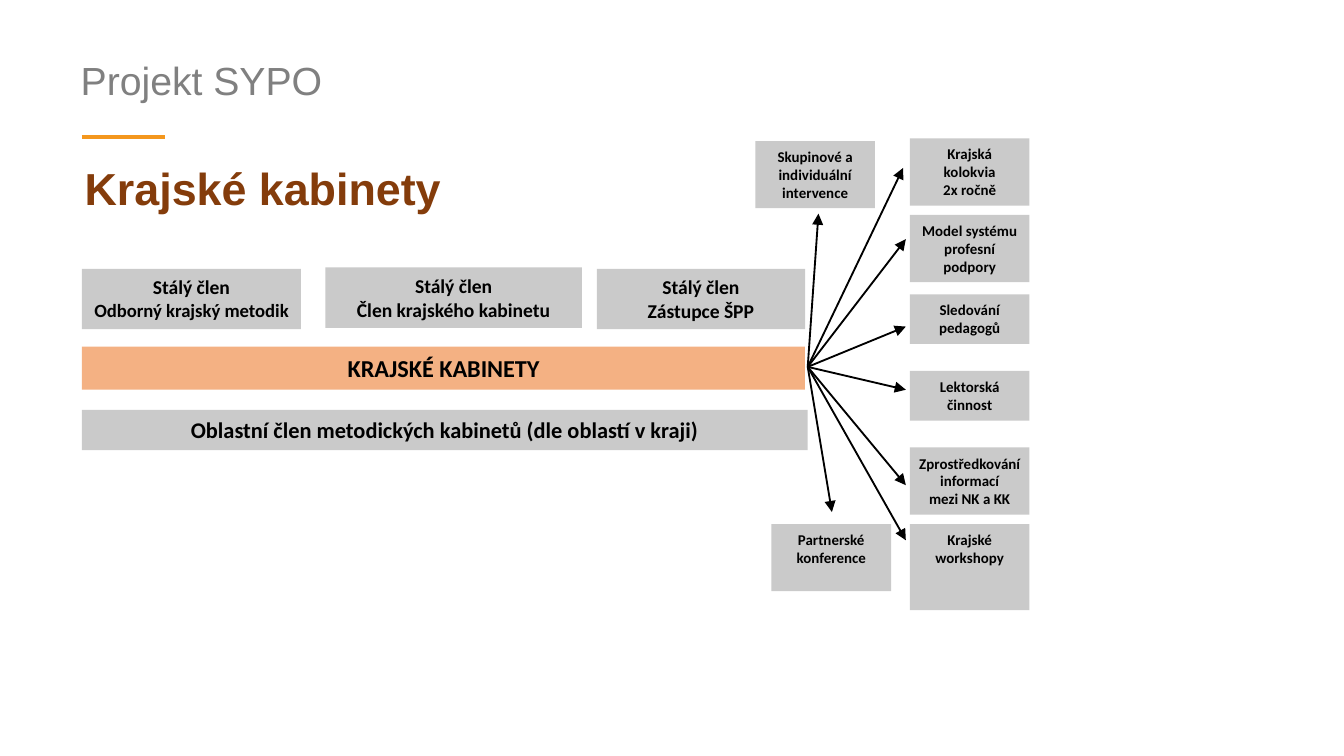
from lxml.etree import SubElement
from pptx import Presentation
from pptx.dml.color import RGBColor
from pptx.enum.shapes import MSO_CONNECTOR, MSO_SHAPE
from pptx.enum.text import MSO_ANCHOR, PP_ALIGN
from pptx.oxml.ns import qn
from pptx.util import Inches, Pt

COLORS = {
    "accent": "F4971D",
    "title": "808080",
    "heading": "843C0B",
    "band": "F4B183",
    "box": "CACACA",
    "ink": "000000",
}
HUB = (6.01, 2.73)
ACTIVITY_LEFT, ACTIVITY_WIDTH = 6.77, 0.89

MEMBERS = [
    (0.61, 2, 1.63, ["Stálý člen", "Odborný krajský metodik"], [10.5, 10]),
    (2.42, 1.99, 1.91, ["Stálý člen", "Člen krajského kabinetu"], [10.5, 10.5]),
    (4.44, 2, 1.55, ["Stálý člen", "Zástupce ŠPP"], [10.5, 10.5]),
]
ACTIVITIES = [
    (ACTIVITY_LEFT, 1.03, 0.5, ["Krajská", "kolokvia", "2x ročně"], (6.72, 1.25)),
    (ACTIVITY_LEFT, 1.6, 0.5, ["Model systému profesní podpory"], (6.74, 1.78)),
    (ACTIVITY_LEFT, 2.19, 0.37, ["Sledování pedagogů"], (6.74, 2.43)),
    (ACTIVITY_LEFT, 2.76, 0.37, ["Lektorská činnost"], (6.74, 2.9)),
    (ACTIVITY_LEFT, 3.33, 0.5, ["Zprostředkování", "informací", "mezi NK a KK"], (6.74, 3.61)),
    (ACTIVITY_LEFT, 3.9, 0.64, ["Krajské", "workshopy"], (6.74, 4.02)),
    (5.74, 3.9, 0.5, ["Partnerské", "konference"], (6.19, 3.81)),
    (5.62, 1.05, 0.5, ["Skupinové a individuální intervence"], (6.09, 1.59)),
]


def color(name):
    """Return the named colour."""
    return RGBColor.from_string(COLORS[name])


def prepare_frame(frame, anchor):
    """Set wrapping, even margins and the vertical anchor."""
    frame.word_wrap = True
    frame.vertical_anchor = anchor
    frame.margin_left = frame.margin_right = Inches(0.05)
    frame.margin_top = frame.margin_bottom = Inches(0.05)


def style_font(font, name, size, color_name, bold):
    """Set the face, size, colour and weight of a font."""
    font.name = name
    font.size = Pt(size)
    font.bold = bold
    font.color.rgb = color(color_name)


def add_heading(page, bounds, text, size, color_name, bold, spacing, anchor):
    """Add a one-line heading."""
    box = page.shapes.add_textbox(*map(Inches, bounds))
    prepare_frame(box.text_frame, anchor)
    para = box.text_frame.paragraphs[0]
    para.text = text
    para.line_spacing = spacing
    style_font(para.font, "Arial", size, color_name, bold)


def add_box(page, bounds, lines, sizes, fill="box"):
    """Add a filled rectangle with one centred bold paragraph per line."""
    box = page.shapes.add_shape(MSO_SHAPE.RECTANGLE, *map(Inches, bounds))
    box.shadow.inherit = False
    box.fill.solid()
    box.fill.fore_color.rgb = color(fill)
    box.line.fill.background()
    frame = box.text_frame
    prepare_frame(frame, MSO_ANCHOR.TOP)
    frame.text = "\n".join(lines)
    for para, size in zip(frame.paragraphs, sizes):
        para.alignment = PP_ALIGN.CENTER
        style_font(para.font, "Calibri", size, "ink", True)


def add_line(page, start, end, color_name, width, arrow=False):
    """Add a straight line, with an arrowhead at its end if asked."""
    line = page.shapes.add_connector(
        MSO_CONNECTOR.STRAIGHT, *map(Inches, (*start, *end)))
    line.line.color.rgb = color(color_name)
    line.line.width = Pt(width)
    properties = line._element.spPr
    if arrow:
        SubElement(properties.find(qn("a:ln")), qn("a:tailEnd"), type="triangle")
    SubElement(properties, qn("a:effectLst"))


def main():
    """Build the slide and save the deck."""
    deck = Presentation()
    deck.slide_width = Inches(10)
    deck.slide_height = deck.slide_width * 9 // 16
    page = deck.slides.add_slide(deck.slide_layouts[6])

    add_line(page, (0.61, 1.02), (1.23, 1.02), "accent", 2)
    add_heading(page, (0.55, 0.34, 8.69, 0.66), "Projekt SYPO",
                21, "title", False, 1.08, MSO_ANCHOR.TOP)
    add_heading(page, (0.58, 1.17, 7.5, 0.5), "Krajské kabinety",
                24, "heading", True, 0.9, MSO_ANCHOR.MIDDLE)

    add_box(page, (0.61, 2.58, 5.38, 0.32), ["KRAJSKÉ KABINETY"], [13], "band")
    add_box(page, (0.61, 3.05, 5.4, 0.3),
            ["Oblastní člen metodických kabinetů (dle oblastí v kraji)"], [12])
    for left, top, width, lines, sizes in MEMBERS:
        add_box(page, (left, top, width, 0.45), lines, sizes)

    for left, top, height, lines, tip in ACTIVITIES:
        add_box(page, (left, top, ACTIVITY_WIDTH, height), lines, [8] * len(lines))
        add_line(page, HUB, tip, "ink", 1, arrow=True)

    deck.save("out.pptx")


if __name__ == "__main__":
    main()
